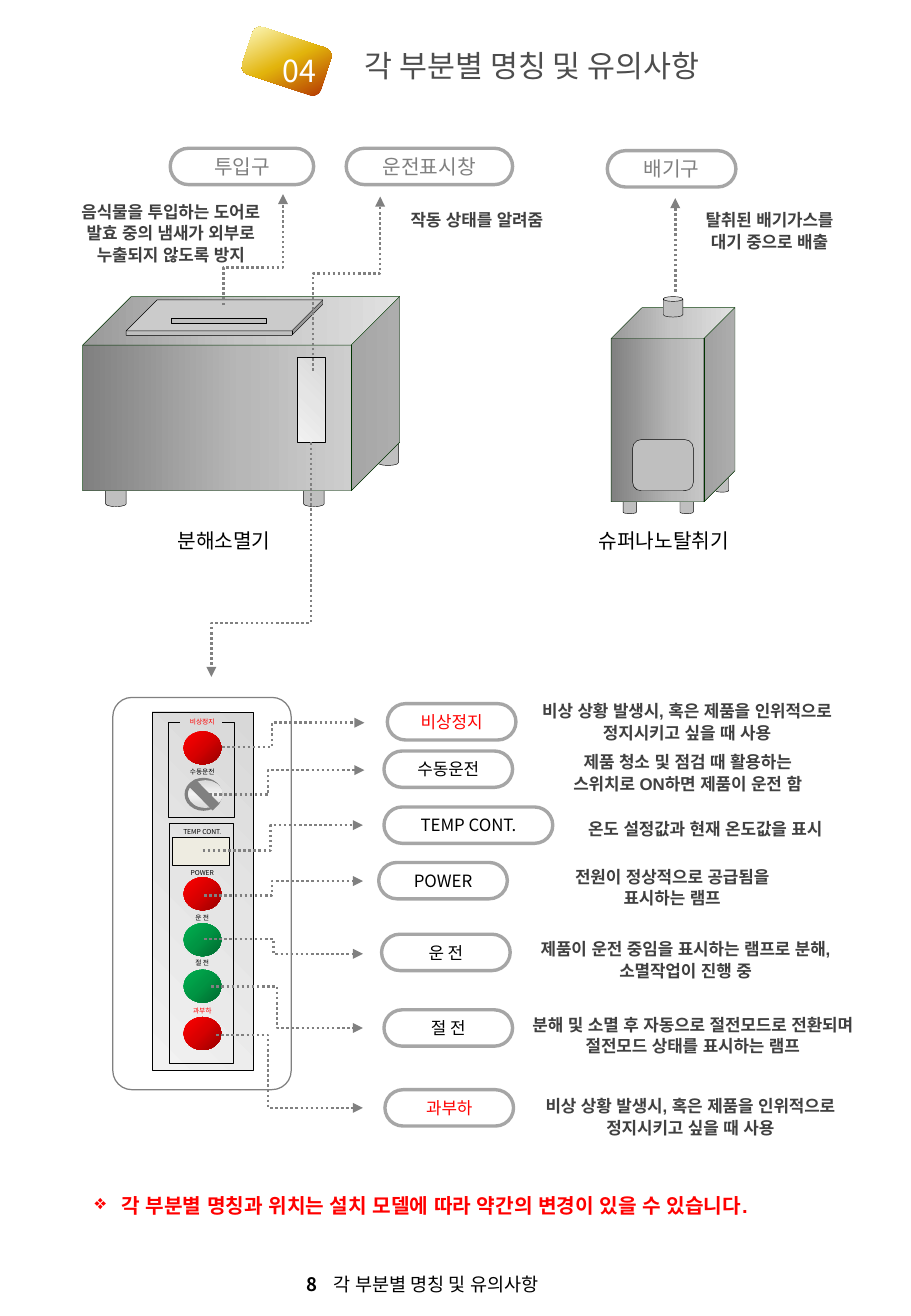
from lxml import etree
from pptx import Presentation
from pptx.dml.color import RGBColor
from pptx.enum.dml import MSO_LINE
from pptx.enum.shapes import MSO_CONNECTOR, MSO_SHAPE
from pptx.enum.text import MSO_ANCHOR, PP_ALIGN
from pptx.oxml import parse_xml
from pptx.oxml.ns import nsdecls, qn
from pptx.util import Cm, Pt

CAN, CUBE, OVAL = MSO_SHAPE.CAN, MSO_SHAPE.CUBE, MSO_SHAPE.OVAL
RECT, ROUND, PROCESS = MSO_SHAPE.RECTANGLE, MSO_SHAPE.ROUNDED_RECTANGLE, MSO_SHAPE.FLOWCHART_PROCESS
STRAIGHT, ELBOW, DOTTED = MSO_CONNECTOR.STRAIGHT, MSO_CONNECTOR.ELBOW, MSO_LINE.ROUND_DOT
LEFT, CENTER = PP_ALIGN.LEFT, PP_ALIGN.CENTER
TOP, MIDDLE = MSO_ANCHOR.TOP, MSO_ANCHOR.MIDDLE
KOREAN = "Noto Sans CJK KR"
BLACK, WHITE, RED, GRAY, SILVER = "000000", "FFFFFF", "FF0000", "808080", "BFBFBF"

LINEAR = '<a:lin ang="{}" scaled="0"/>'
RADIAL = '<a:path path="circle"><a:fillToRect l="100000" t="100000"/></a:path>'
STEEL = ([GRAY, "B7B7B7", "D9D9D9"], LINEAR.format(0))
PLATE = (["D8D8D8", "E5E5E5", "F2F2F2"], LINEAR.format(8100000))
KNOB = (["D9D9D9", "F2F2F2", "D9D9D9"], LINEAR.format(5400000))
GOLD = (["B02A00", "E2B40C", "FFFFCC"], LINEAR.format(13500000))
RED_LAMP = (["970000", "D70000", RED], RADIAL)
GREEN_LAMP = (["00682F", "009443", "00B050"], RADIAL)

prs = Presentation()
prs.slide_width, prs.slide_height = Cm(19.05), Cm(27.51)
shapes = prs.slides.add_slide(prs.slide_layouts[6]).shapes


def add_shape(kind, *box, fill=None, line=BLACK, width=0.25, adj=None):
    s = shapes.add_shape(kind, *map(Cm, box))
    s.shadow.inherit = False
    if adj is not None:
        s.adjustments[0] = adj
    if isinstance(fill, str):
        s.fill.solid()
        s.fill.fore_color.rgb = RGBColor.from_string(fill)
    else:
        s.fill.background()
    if isinstance(fill, tuple):
        colors, direction = fill
        stops = "".join(f'<a:gs pos="{i * 50000}"><a:srgbClr val="{c}"/></a:gs>'
                        for i, c in enumerate(colors))
        spPr = s._element.spPr
        spPr.replace(spPr.find(qn("a:noFill")), parse_xml(
            f'<a:gradFill {nsdecls("a")} rotWithShape="1"><a:gsLst>{stops}</a:gsLst>{direction}</a:gradFill>'))
    if line:
        s.line.color.rgb = RGBColor.from_string(line)
        s.line.width = Pt(width)
    else:
        s.line.fill.background()
    return s


def write(s, text, size=10, color="404040", font="Arial", bold=False, align=CENTER,
          anchor=TOP, wrap=True, spacing=None):
    tf = s.text_frame
    tf.word_wrap = wrap
    tf.vertical_anchor = anchor
    for i, line in enumerate(text.split("\n")):
        p = tf.add_paragraph() if i else tf.paragraphs[0]
        p.alignment = align
        if spacing:
            p.line_spacing = spacing
        r = p.add_run()
        r.text = line
        r.font.size, r.font.bold, r.font.name = Pt(size), bold, font
        r.font.color.rgb = RGBColor.from_string(color)
        etree.SubElement(r.font._element, qn("a:ea")).set("typeface", font)
    return tf.paragraphs[0]


tile = add_shape(ROUND, 5.13, 0.76, 1.73, 1.04, fill=GOLD, line=None)
tile.rotation = 18.3
for x, y, w, text, color in [(5.66, 0.97, 1.32, "04", WHITE),
                             (7.38, 0.86, 8.5, "각 부분별 명칭 및 유의사항", "4D4D4D")]:
    write(shapes.add_textbox(Cm(x), Cm(y), Cm(w), Cm(1.02)), text, size=18, color=color,
          font=KOREAN, align=LEFT, anchor=MIDDLE, wrap=False)

for x, y in [(7.9, 9.04), (6.35, 9.9), (2.21, 9.9)]:
    add_shape(CAN, x, y, 0.43, 0.69, fill=SILVER)
add_shape(CUBE, 1.73, 6.2, 6.63, 4.06, fill=STEEL, line="003300")
add_shape(CUBE, 2.64, 6.27, 4.11, 0.74, fill=SILVER, adj=0.873)
add_shape(PROCESS, 6.22, 7.47, 0.58, 1.78, fill=PLATE)
add_shape(PROCESS, 3.58, 6.65, 1.98, 0.1, fill=SILVER)

for x, y in [(14.96, 9.65), (13.03, 10.1), (14.22, 10.1)]:
    add_shape(CAN, x, y, 0.28, 0.64, fill=SILVER)
add_shape(CUBE, 12.78, 6.43, 2.59, 4.06, fill=STEEL, line="003300")
add_shape(CAN, 13.87, 6.2, 0.41, 0.43, fill=SILVER)
add_shape(ROUND, 13.23, 9.19, 1.27, 1.07, fill=SILVER)

for x, text in [(2.69, "분해소멸기"), (11.89, "슈퍼나노탈취기")]:
    write(shapes.add_textbox(Cm(x), Cm(10.97), Cm(3.99), Cm(0.66)), text, size=12,
          color=BLACK, font=KOREAN, anchor=MIDDLE)

add_shape(ROUND, 2.36, 14.58, 3.73, 8.2, fill=WHITE, line=GRAY, width=0, adj=0.107)
add_shape(PROCESS, 3.18, 14.88, 2.11, 7.49, fill=PLATE)
add_shape(RECT, 3.53, 17.22, 1.35, 5)
bracket = [(Cm(x), Cm(y)) for x, y in [(3.76, 15.11), (3.53, 15.11), (3.53, 17.09),
                                       (4.9, 17.09), (4.9, 15.11), (4.65, 15.11)]]
builder = shapes.build_freeform(*bracket[0])
builder.add_line_segments(bracket[1:], close=False)
s = builder.convert_to_shape()
s.shadow.inherit = False
s.fill.background()
s.line.color.rgb = RGBColor.from_string(BLACK)
s.line.width = Pt(0)

for y, lamp in [(15.29, RED_LAMP), (18.34, RED_LAMP), (19.3, GREEN_LAMP),
                (20.27, GREEN_LAMP), (21.26, RED_LAMP)]:
    add_shape(OVAL, 3.84, y, 0.79, 0.69, fill=lamp, line=None)
add_shape(OVAL, 3.86, 16.26, 0.79, 0.69, fill=GRAY, line=None)
add_shape(OVAL, 3.94, 16.31, 0.71, 0.58, fill=KNOB, line=None)
add_shape(RECT, 3.61, 17.5, 1.19, 0.58, fill="EEECE1")

switches = [("비상정지", RED, 14.91), ("수동운전", BLACK, 15.95), ("TEMP CONT.", BLACK, 17.2),
            ("POWER", BLACK, 18.06), ("운 전", BLACK, 19), ("절 전", BLACK, 19.94),
            ("과부하", RED, 20.96)]
for text, color, y in switches:
    write(shapes.add_textbox(Cm(3.43), Cm(y), Cm(1.6), Cm(0.36)), text, size=4,
          color=color, font=KOREAN, anchor=MIDDLE)

emergency = "비상 상황 발생시, 혹은 제품을 인위적으로 정지시키고 싶을 때 사용"
pills = [(3.56, 3.1, 3, "투입구", GRAY, 12), (7.24, 3.1, 3.48, "운전표시창", GRAY, 12),
         (12.7, 3.15, 2.69, "배기구", GRAY, 12)]
places = [(8.1, 14.71, 2.69), (8.03, 15.7, 2.69), (8.03, 16.87, 3.53), (7.92, 18.03, 2.69),
          (7.98, 19.53, 2.69), (8.03, 21.11, 2.69), (8.05, 22.78, 2.69)]
pills += [(*place, text, color, 10) for place, (text, color, _) in zip(places, switches)]
for x, y, w, text, color, size in pills:
    s = add_shape(ROUND, x, y, w, 0.76, fill=WHITE, line="A6A6A6", width=2, adj=0.5)
    write(s, text, size=size, color=color, font=KOREAN, anchor=MIDDLE)

notes = [
    (0.84, 4.06, 5.46, 1.3, "음식물을 투입하는 도어로\n발효 중의 냄새가 외부로\n누출되지 않도록 방지"),
    (7.24, 4.24, 5.46, 0.61, "작동 상태를 알려줌"),
    (14.25, 4.24, 3.68, 0.99, "탈취된 배기가스를\n대기 중으로 배출"),
    (11, 14.5, 6.73, 0.99, emergency),
    (10.85, 15.57, 7.06, 0.99, "제품 청소 및 점검 때 활용하는\n스위치로 ON하면 제품이 운전 함"),
    (11.38, 16.97, 6.73, 0.61, "온도 설정값과 현재 온도값을 표시"),
    (10.69, 17.96, 6.73, 0.99, "전원이 정상적으로 공급됨을\n표시하는 램프"),
    (10.97, 19.48, 6.73, 0.99, "제품이 운전 중임을 표시하는 램프로 분해, 소멸작업이 진행 중"),
    (10.8, 21.06, 7.37, 0.99, "분해 및 소멸 후 자동으로 절전모드로 전환되며 절전모드 상태를 표시하는 램프"),
    (11.07, 22.76, 6.73, 0.99, emergency),
]
for *box, text in notes:
    write(shapes.add_textbox(*map(Cm, box)), text, bold=True, spacing=1.06)

lines = [
    (STRAIGHT, 4.01, 16.36, 4.52, 16.87, None, False),
    (STRAIGHT, 14.12, 6.1, 14.12, 4.14, None, False),
    (ELBOW, 4.67, 6.38, 5.92, 4.06, 5.59, True),
    (ELBOW, 6.55, 7.75, 7.95, 4.11, 5.72, True),
    (ELBOW, 6.5, 9.25, 4.42, 14.15, 13.03, True),
    (ELBOW, 4.65, 15.62, 7.62, 15.11, 5.69, False),
    (ELBOW, 4.27, 16.61, 7.62, 16.1, 5.61, False),
    (ELBOW, 4.24, 17.78, 7.59, 17.25, 5.66, False),
    (ELBOW, 4.27, 18.72, 7.59, 18.42, 5.69, False),
    (ELBOW, 4.27, 19.63, 7.59, 19.94, 5.72, False),
    (ELBOW, 4.42, 20.62, 7.59, 21.49, 5.79, False),
    (ELBOW, 4.52, 21.64, 7.59, 23.16, 5.61, False),
]
for i, (kind, x1, y1, x2, y2, bend, upright) in enumerate(lines):
    start, end = (y1, y2) if upright else (x1, x2)
    if upright:
        cx, cy = (x1 + x2) / 2, (y1 + y2) / 2
        x1, y1, x2, y2 = cx + y1 - cy, cy - x1 + cx, cx + y2 - cy, cy - x2 + cx
    s = shapes.add_connector(kind, Cm(x1), Cm(y1), Cm(x2), Cm(y2))
    s.line.color.rgb = RGBColor.from_string(GRAY)
    s.line.width = Pt(1.5 if i else 5.75)
    spPr = s._element.spPr
    if i:
        s.line.dash_style = DOTTED
        etree.SubElement(spPr.find(qn("a:ln")), qn("a:tailEnd")).set("type", "triangle")
    if upright:
        spPr.find(qn("a:xfrm")).set("rot", "5400000")
    if bend:
        guide = etree.SubElement(spPr.find(qn("a:prstGeom")).find(qn("a:avLst")), qn("a:gd"))
        guide.set("name", "adj1")
        guide.set("fmla", f"val {round((bend - start) / (end - start) * 100000)}")
    etree.SubElement(spPr, qn("a:effectLst"))

p = write(shapes.add_textbox(Cm(1.73), Cm(24.56), Cm(15.98), Cm(1.02)),
          "각 부분별 명칭과 위치는 설치 모델에 따라 약간의 변경이 있을 수 있습니다.",
          size=12, color=RED, bold=True, align=LEFT, spacing=1.5)
pPr = p._p.get_or_add_pPr()
pPr.set("marL", str(Cm(0.56)))
pPr.set("indent", str(-Cm(0.56)))
etree.SubElement(pPr, qn("a:buChar")).set("char", "❖")

p = write(shapes.add_textbox(Cm(6.15), Cm(26.47), Cm(7.62), Cm(0.74)), "8\t", size=11,
          color=BLACK, font=KOREAN, bold=True, align=LEFT, anchor=MIDDLE)
tabs = etree.SubElement(p._p.get_or_add_pPr(), qn("a:tabLst"))
tab = etree.SubElement(tabs, qn("a:tab"))
tab.set("pos", str(Cm(0.58)))
tab.set("algn", "l")
r = p.add_run()
r.text = "각 부분별 명칭 및 유의사항"
r.font.size, r.font.name = Pt(11), KOREAN
r.font.color.rgb = RGBColor.from_string(BLACK)
etree.SubElement(r.font._element, qn("a:ea")).set("typeface", KOREAN)

prs.save("out.pptx")
